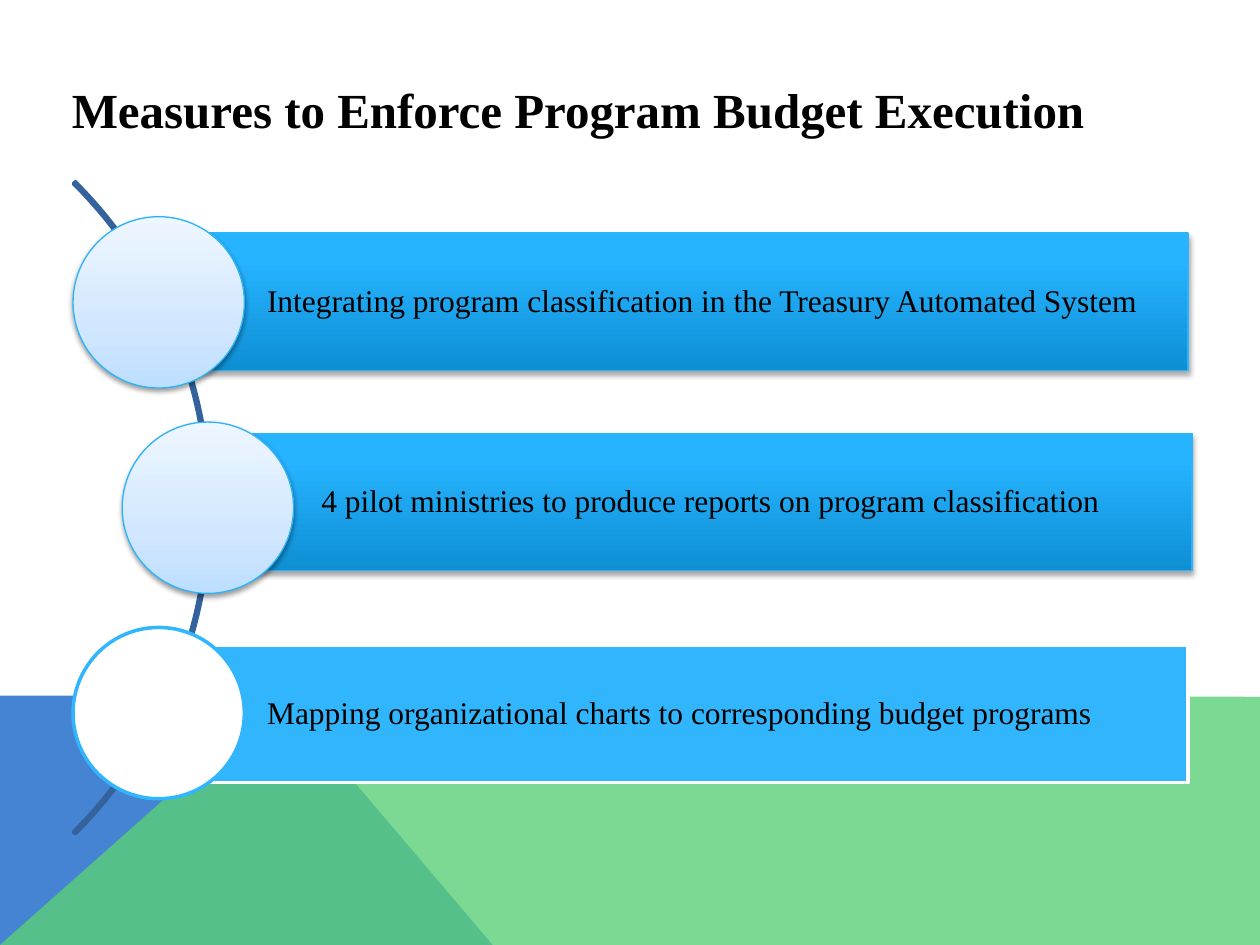
from dataclasses import dataclass

import pptx
import pptx.dml.color
import pptx.enum.shapes
import pptx.enum.text
import pptx.oxml
import pptx.oxml.ns
import pptx.util
from pptx.util import Inches

FONT = "Times New Roman"
ACCENT = "31B6FD"
EDGE = "2BB4FC"
BAR_GRADIENT = ((0, "0E8FD4"), (80, "26B3FF"), (100, "27B4FF"))
CIRCLE_GRADIENT = ((0, "BDDEFF"), (35, "D1E7FF"), (100, "EEF6FF"))
BAR_HEIGHT = 1.09
CIRCLE_SIZE = 1.36
SHAPES = pptx.enum.shapes.MSO_SHAPE


@dataclass
class Shadow:
    alpha: int
    distance: float
    blur: float = 3.1


@dataclass
class Style:
    fill: str | tuple
    line: str
    line_width: float
    shadow: Shadow | None = None


@dataclass
class Measure:
    text: str
    bar_left: float
    bar_top: float
    bar_width: float
    circle_left: float
    circle_top: float
    bar_style: Style
    circle_style: Style


GLOSSY_BAR = Style(BAR_GRADIENT, EDGE, 0.75, Shadow(35, 1.8))
GLOSSY_CIRCLE = Style(CIRCLE_GRADIENT, EDGE, 0.75, Shadow(38, 1.6))
FLAT_BAR = Style(ACCENT, "FFFFFF", 2)
FLAT_CIRCLE = Style("FFFFFF", ACCENT, 2)

MEASURES = [
    Measure("Integrating program classification in the Treasury Automated System",
            1.26, 1.85, 8.17, 0.58, 1.72, GLOSSY_BAR, GLOSSY_CIRCLE),
    Measure("4 pilot ministries to produce reports on program classification",
            1.69, 3.44, 7.77, 0.97, 3.35, GLOSSY_BAR, GLOSSY_CIRCLE),
    Measure("Mapping organizational charts to corresponding budget programs",
            1.26, 5.12, 8.17, 0.58, 4.98, FLAT_BAR, FLAT_CIRCLE),
]


def color(value: str):
    return pptx.dml.color.RGBColor.from_string(value)


def drawing_xml(xml: str):
    """Parse an element that uses the a: prefix."""
    head, rest = xml.split(" ", 1) if " " in xml.split(">", 1)[0] else (xml.split(">", 1)[0], ">" + xml.split(">", 1)[1])
    return pptx.oxml.parse_xml(f"{head} {pptx.oxml.ns.nsdecls('a')} {rest}")


def fill_gradient(shape, stops: tuple) -> None:
    """Fill from bottom to top with stops of (percent, colour)."""
    shape.fill.gradient()
    shape.fill.gradient_angle = 90
    old_stops = shape._element.spPr.find(".//" + pptx.oxml.ns.qn("a:gsLst"))
    stop_xml = "".join(
        f'<a:gs pos="{percent * 1000}"><a:srgbClr val="{value}"/></a:gs>'
        for percent, value in stops)
    old_stops.getparent().replace(
        old_stops, drawing_xml(f"<a:gsLst>{stop_xml}</a:gsLst>"))


def apply_style(shape, style: Style) -> None:
    if isinstance(style.fill, str):
        shape.fill.solid()
        shape.fill.fore_color.rgb = color(style.fill)
    else:
        fill_gradient(shape, style.fill)
    shape.line.color.rgb = color(style.line)
    shape.line.width = pptx.util.Pt(style.line_width)
    shape.shadow.inherit = False
    if style.shadow:
        effects = shape._element.spPr.find(pptx.oxml.ns.qn("a:effectLst"))
        effects.append(drawing_xml(
            f'<a:outerShdw blurRad="{pptx.util.Pt(style.shadow.blur)}" '
            f'dist="{pptx.util.Pt(style.shadow.distance)}" dir="5400000" rotWithShape="0">'
            f'<a:srgbClr val="000000"><a:alpha val="{style.shadow.alpha * 1000}"/>'
            "</a:srgbClr></a:outerShdw>"))


def add_styled_shape(slide, kind, left: float, top: float, width: float,
                     height: float, style: Style):
    shape = slide.shapes.add_shape(
        kind, Inches(left), Inches(top), Inches(width), Inches(height))
    apply_style(shape, style)
    return shape


def write_text(shape, text: str, size: float, bold: bool, frame_format: dict) -> None:
    """Write one left-aligned black line, centred vertically."""
    frame = shape.text_frame
    frame.text = text
    frame_format = {"word_wrap": True,
                    "vertical_anchor": pptx.enum.text.MSO_ANCHOR.MIDDLE, **frame_format}
    for name, value in frame_format.items():
        setattr(frame, name, value)
    paragraph = frame.paragraphs[0]
    paragraph.alignment = pptx.enum.text.PP_ALIGN.LEFT
    font = paragraph.runs[0].font
    for name, value in {"name": FONT, "size": pptx.util.Pt(size), "bold": bold}.items():
        setattr(font, name, value)
    font.color.rgb = color("000000")


def add_background_area(slide, points: list, fill: str, alpha: int = 100) -> None:
    builder = slide.shapes.build_freeform(
        *(Inches(value) for value in points[0]), scale=1.0)
    builder.add_line_segments([(Inches(x), Inches(y)) for x, y in points[1:]], close=True)
    area = builder.convert_to_shape()
    area.fill.solid()
    area.fill.fore_color.rgb = color(fill)
    area.line.fill.background()
    area.shadow.inherit = False
    if alpha < 100:
        fill_color = area._element.spPr.find(".//" + pptx.oxml.ns.qn("a:srgbClr"))
        fill_color.append(drawing_xml(f'<a:alpha val="{alpha * 1000}"/>'))


def add_measure(slide, measure: Measure) -> None:
    bar = add_styled_shape(slide, SHAPES.RECTANGLE, measure.bar_left, measure.bar_top,
                           measure.bar_width, BAR_HEIGHT, measure.bar_style)
    inset = Inches(0.05)
    write_text(bar, measure.text, 18, False, {
        "margin_left": Inches(0.86), "margin_right": inset,
        "margin_top": inset, "margin_bottom": inset})
    bar.text_frame.paragraphs[0].line_spacing = 0.9
    add_styled_shape(slide, SHAPES.OVAL, measure.circle_left, measure.circle_top,
                     CIRCLE_SIZE, CIRCLE_SIZE, measure.circle_style)


def main() -> None:
    presentation = pptx.Presentation()
    presentation.slide_width = Inches(10)
    presentation.slide_height = Inches(7.5)
    slide = presentation.slides.add_slide(presentation.slide_layouts[5])

    add_background_area(slide, [(0, 7.5), (0, 5.52), (2.23, 5.52), (3.91, 7.5)], "4584D3")
    add_background_area(slide, [(0, 7.5), (2.23, 5.52), (10, 5.53), (10, 7.5)], "5BD078", 80)

    title = slide.shapes.title
    for name, value in {"left": 0.47, "top": 0.4, "width": 8.66, "height": 0.93}.items():
        setattr(title, name, Inches(value))
    write_text(title, "Measures to Enforce Program Budget Execution", 28, True, {})

    arc = add_styled_shape(slide, SHAPES.BLOCK_ARC, -5.65, 0.37, 7.32, 7.32,
                           Style("4584D3", "33629C", 2))
    for index, value in enumerate((189, 27, 0.003)):
        arc.adjustments[index] = value

    for measure in MEASURES:
        add_measure(slide, measure)
    presentation.save("out.pptx")


if __name__ == "__main__":
    main()
